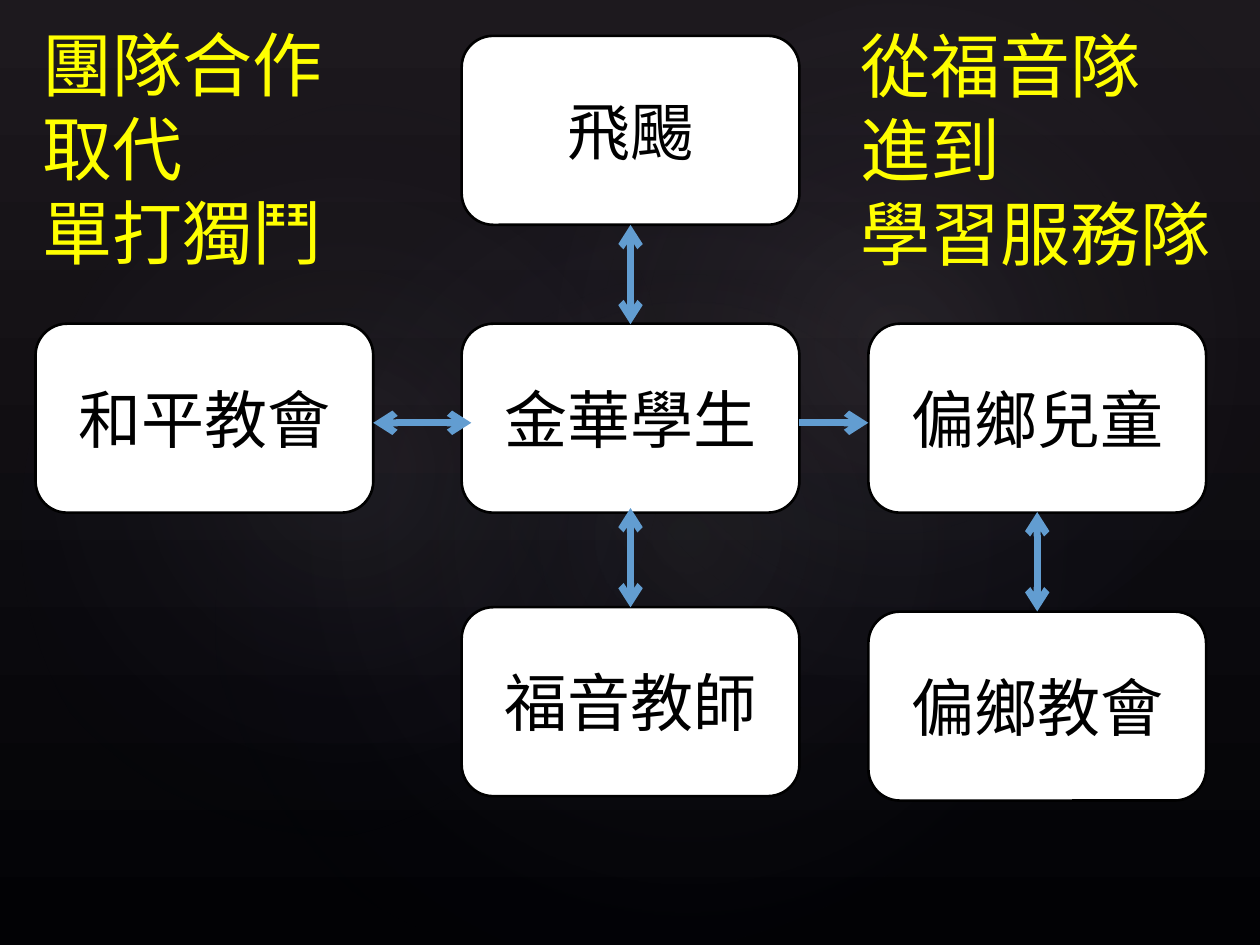
from lxml import etree
from pptx import Presentation
from pptx.dml.color import RGBColor
from pptx.enum.shapes import MSO_CONNECTOR, MSO_SHAPE
from pptx.enum.text import MSO_ANCHOR, PP_ALIGN
from pptx.oxml.ns import qn
from pptx.util import Pt

COLORS = {"top": "1D191E", "bottom": "020205", "glow": "C4BCC6", "edge": "242852",
          "box": "FFFFFF", "ink": "000000", "arrow": "629DD1", "slogan": "FFFF00"}
FONT = "Noto Sans CJK SC"
BOX_W, BOX_H = 193, 108


def rgb(name):
    return RGBColor.from_string(COLORS[name])


def write(tf, text, size, color, align=PP_ALIGN.LEFT, spacing=None):
    """Fill a text frame with one paragraph; \\v marks a line break."""
    tf.word_wrap = True
    p = tf.paragraphs[0]
    p.text, p.alignment, p.line_spacing = text, align, spacing
    for r in p.runs:
        r.font.name, r.font.size = FONT, Pt(size)
        r.font.color.rgb = rgb(color)
        ea = etree.SubElement(r.font._element, qn("a:ea"))
        ea.set("typeface", FONT)


class Diagram:
    def __init__(self, s):
        self.s = s

    def background(self):
        fill = self.s.background.fill
        fill.gradient()
        fill.gradient_angle = 270
        for stop, name in zip(fill.gradient_stops, ("top", "bottom")):
            stop.color.rgb = rgb(name)

    def glow(self, x, y, w, h, angle, alpha):
        sp = self.s.shapes.add_shape(MSO_SHAPE.OVAL, Pt(x), Pt(y), Pt(w), Pt(h))
        sp.rotation = angle
        sp.shadow.inherit = False
        sp.line.fill.background()
        sp.fill.gradient()
        grad = sp._element.spPr.find(qn("a:gradFill"))
        stops = zip(sp.fill.gradient_stops, grad.iter(qn("a:gs")),
                    (("glow", 0, alpha), ("edge", 0.58, 0)))
        for stop, gs, (name, position, opacity) in stops:
            stop.color.rgb = rgb(name)
            stop.position = position
            etree.SubElement(gs[0], qn("a:alpha")).set("val", str(opacity * 1000))
        # Radial instead of linear
        grad.remove(grad.find(qn("a:lin")))
        radial = etree.SubElement(grad, qn("a:path"), path="circle")
        etree.SubElement(radial, qn("a:fillToRect"),
                         {side: "50000" for side in "ltrb"})

    def box(self, x, y, text):
        sp = self.s.shapes.add_shape(MSO_SHAPE.ROUNDED_RECTANGLE,
                                     Pt(x), Pt(y), Pt(BOX_W), Pt(BOX_H))
        sp.shadow.inherit = False
        sp.fill.solid()
        sp.fill.fore_color.rgb = rgb("box")
        sp.line.color.rgb = rgb("ink")
        sp.line.width = Pt(1.5)
        sp.text_frame.vertical_anchor = MSO_ANCHOR.MIDDLE
        write(sp.text_frame, text, 36, "ink", PP_ALIGN.CENTER)

    def arrow(self, x1, y1, x2, y2, both=True):
        c = self.s.shapes.add_connector(MSO_CONNECTOR.STRAIGHT,
                                        Pt(x1), Pt(y1), Pt(x2), Pt(y2))
        c.line.color.rgb = rgb("arrow")
        c.line.width = Pt(4)
        ln = c.line._get_or_add_ln()
        for end in ("headEnd", "tailEnd") if both else ("tailEnd",):
            etree.SubElement(ln, qn(f"a:{end}"), type="arrow")
        etree.SubElement(c._element.spPr, qn("a:effectLst"))

    def slogan(self, x, y, w, lines):
        sp = self.s.shapes.add_textbox(Pt(x), Pt(y), Pt(w), Pt(152.6))
        write(sp.text_frame, "\v".join(lines), 40, "slogan", spacing=Pt(48))


def main():
    prs = Presentation()
    prs.slide_width, prs.slide_height = Pt(720), Pt(540)
    d = Diagram(prs.slides.add_slide(prs.slide_layouts[6]))

    # Dark backdrop with soft glows
    d.background()
    d.glow(108, 82, 570, 449, 328.7, 7)
    d.glow(-21.6, 92, 436, 353, 294.3, 8)
    d.glow(257.8, 9.4, 510.5, 374.4, 328.7, 8)

    # Boxes on three columns
    left, middle, right = 20.3, 263.8, 496.2
    row = 185
    d.box(left, row, "和平教會")
    d.box(middle, row, "金華學生")
    d.box(right, row, "偏鄉兒童")
    d.box(middle, 20.5, "飛颺")
    d.box(middle, 347, "福音教師")
    d.box(right, 349.5, "偏鄉教會")

    # Arrows between the boxes
    axis = 241.6
    d.arrow(middle + 5.5, axis, left + BOX_W, axis)
    d.arrow(middle + BOX_W, axis, right, axis, both=False)
    for column, top in ((middle, 128.5), (middle, 290.3), (right, 292.6)):
        x = column + BOX_W / 2
        d.arrow(x, top, x, top + 56.8)

    # Slogans in the upper corners
    d.slogan(17.3, 8.6, 226.8, ("團隊合作", "取代", "單打獨鬥"))
    d.slogan(484.6, 9.4, 215.3, ("從福音隊", "進到", "學習服務隊"))

    prs.save("out.pptx")


if __name__ == "__main__":
    main()
